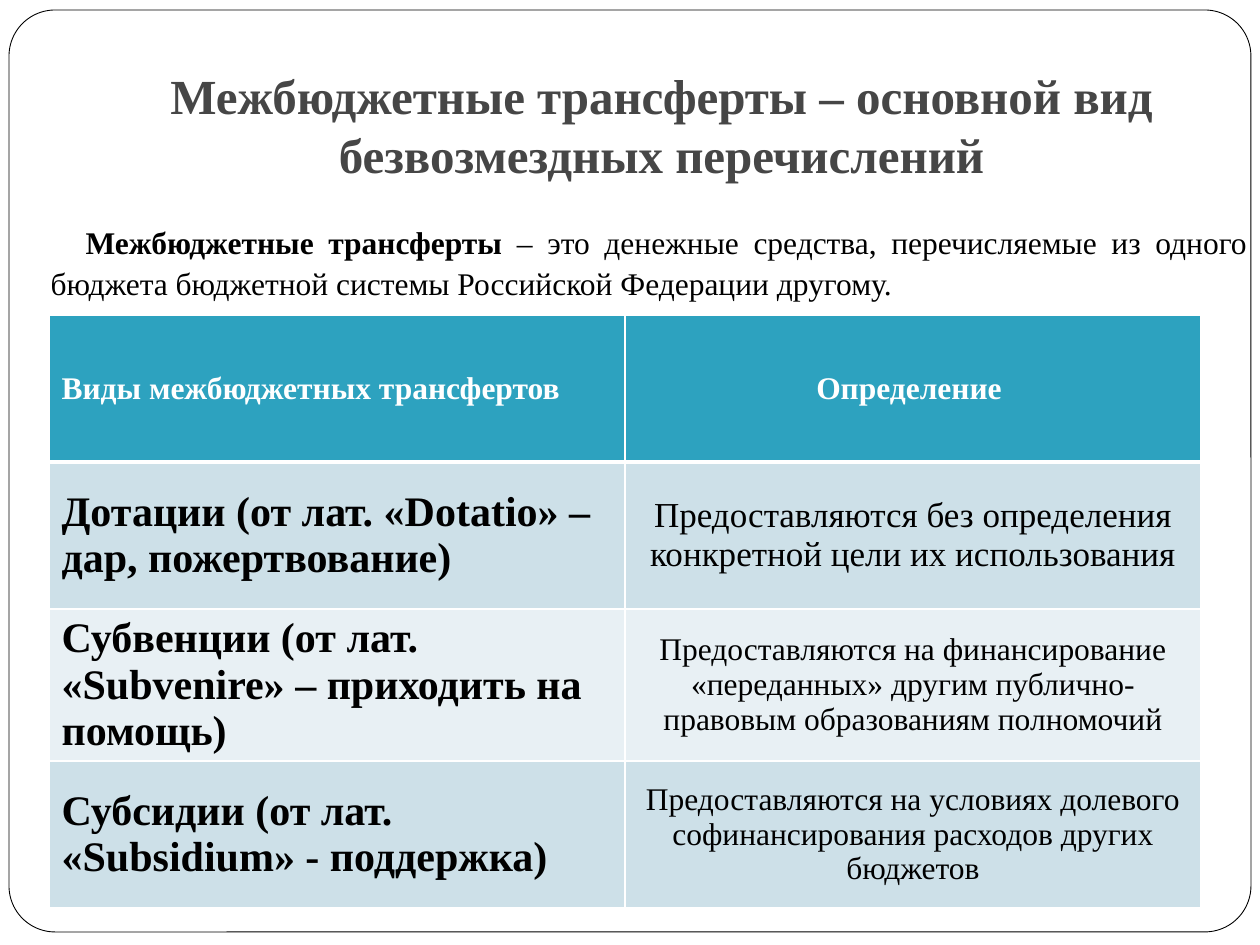
from lxml import etree
from pptx import Presentation
from pptx.dml.color import RGBColor
from pptx.enum.shapes import MSO_SHAPE
from pptx.enum.text import MSO_ANCHOR, MSO_AUTO_SIZE, PP_ALIGN
from pptx.oxml.ns import qn
from pptx.util import Pt

ROUNDED = MSO_SHAPE.ROUNDED_RECTANGLE
MIDDLE, BOTTOM, TOP = MSO_ANCHOR.MIDDLE, MSO_ANCHOR.BOTTOM, MSO_ANCHOR.TOP
LEFT, CENTER, JUSTIFY = PP_ALIGN.LEFT, PP_ALIGN.CENTER, PP_ALIGN.JUSTIFY
NO_AUTOFIT = MSO_AUTO_SIZE.NONE

FONT = "Times New Roman"
COLORS = {
    "white": "FFFFFF",
    "black": "000000",
    "title": "464646",
    "header": "2DA2BF",
    "odd": "CDE0E8",
    "even": "E8F0F4",
}

TITLE = "Межбюджетные трансферты – основной вид безвозмездных перечислений"
TERM = "Межбюджетные трансферты "
MEANING = ("– это денежные средства, перечисляемые из одного бюджета "
           "бюджетной системы Российской Федерации другому.")
HEADINGS = ("Виды межбюджетных трансфертов", "Определение ")
TRANSFERS = [
    ("Дотации (от лат. «Dotatio» – дар, пожертвование)",
     "Предоставляются без определения конкретной цели их использования", 20),
    ("Субвенции (от лат. «Subvenire» – приходить на помощь)",
     "Предоставляются на финансирование «переданных» другим "
     "публично-правовым образованиям полномочий", 18),
    ("Субсидии (от лат. «Subsidium» - поддержка)",
     "Предоставляются на условиях долевого софинансирования расходов "
     "других бюджетов", 18),
]

COLUMN_WIDTH, ROW_HEIGHT = 576, 147


def px(length):
    return round(length * 914400 / 126)


def rgb(name):
    return RGBColor.from_string(COLORS[name])


def place(part, left, top, width, height):
    part.left, part.top = px(left), px(top)
    part.width, part.height = px(width), px(height)


def style(run, size, color, bold):
    run.font.name = FONT
    run.font.size = Pt(size)
    run.font.color.rgb = rgb(color)
    run.font.bold = bold


def add_border(cell, side, width):
    line = etree.SubElement(cell._tc.get_or_add_tcPr(), qn(f"a:{side}"), w=str(Pt(width)))
    fill = etree.SubElement(line, qn("a:solidFill"))
    etree.SubElement(fill, qn("a:srgbClr"), val=COLORS["white"])


def fill_cell(cell, text, size, color, bold, align, background, top_line, bottom_line):
    for side, width in (("lnL", 1), ("lnR", 1), ("lnT", top_line), ("lnB", bottom_line)):
        add_border(cell, side, width)
    cell.fill.solid()
    cell.fill.fore_color.rgb = rgb(background)
    cell.vertical_anchor = MIDDLE
    cell.text_frame.text = text
    paragraph = cell.text_frame.paragraphs[0]
    paragraph.alignment = align
    style(paragraph.runs[0], size, color, bold)


prs = Presentation()
prs.slide_width, prs.slide_height = px(1260), px(945)
slide = prs.slides.add_slide(prs.slide_layouts[1])
title, definition = slide.placeholders

frame = slide.shapes.add_shape(ROUNDED, px(9), px(10), px(1242), px(922))
frame.adjustments[0] = 0.05
frame.shadow.inherit = False
frame.fill.solid()
frame.fill.fore_color.rgb = rgb("white")
frame.line.color.rgb = rgb("black")
frame.line.width = Pt(0.5)
slide.shapes._spTree.insert(2, frame._element)

place(title, 126, 38, 1071, 157)
title.text_frame.text = TITLE
title.text_frame.auto_size = NO_AUTOFIT
title.text_frame.vertical_anchor = BOTTOM
title.text_frame.margin_bottom = px(12)
heading = title.text_frame.paragraphs[0]
heading.alignment = CENTER
style(heading.runs[0], 28, "title", True)

place(definition, 0, 199, 1260, 746)
definition.text_frame.auto_size = NO_AUTOFIT
definition.text_frame.vertical_anchor = TOP
definition.text_frame.margin_top = px(20)
sentence = definition.text_frame.paragraphs[0]
sentence.alignment = JUSTIFY
sentence.line_spacing = 1.1
sentence.space_before = Pt(0)
indents = sentence._p.get_or_add_pPr()
indents.set("marL", str(px(38)))
indents.set("indent", str(px(35)))
etree.SubElement(indents, qn("a:buNone"))
for text, bold in ((TERM, True), (MEANING, False)):
    run = sentence.add_run()
    run.text = text
    style(run, 18, "black", bold)

row_count = len(TRANSFERS) + 1
table = slide.shapes.add_table(
    row_count, 2, px(49), px(315), px(2 * COLUMN_WIDTH), px(row_count * ROW_HEIGHT)).table
for column in table.columns:
    column.width = px(COLUMN_WIDTH)
for row in table.rows:
    row.height = px(ROW_HEIGHT)

for column, (text, align) in enumerate(zip(HEADINGS, (LEFT, CENTER))):
    fill_cell(table.cell(0, column), text, 18, "white", True, align, "header", 1, 3)
for row, (kind, purpose, size) in enumerate(TRANSFERS, 1):
    background = "odd" if row % 2 else "even"
    top_line = 3 if row == 1 else 1
    fill_cell(table.cell(row, 0), kind, 24, "black", True, LEFT, background, top_line, 1)
    fill_cell(table.cell(row, 1), purpose, size, "black", False, CENTER, background, top_line, 1)

prs.save("out.pptx")
